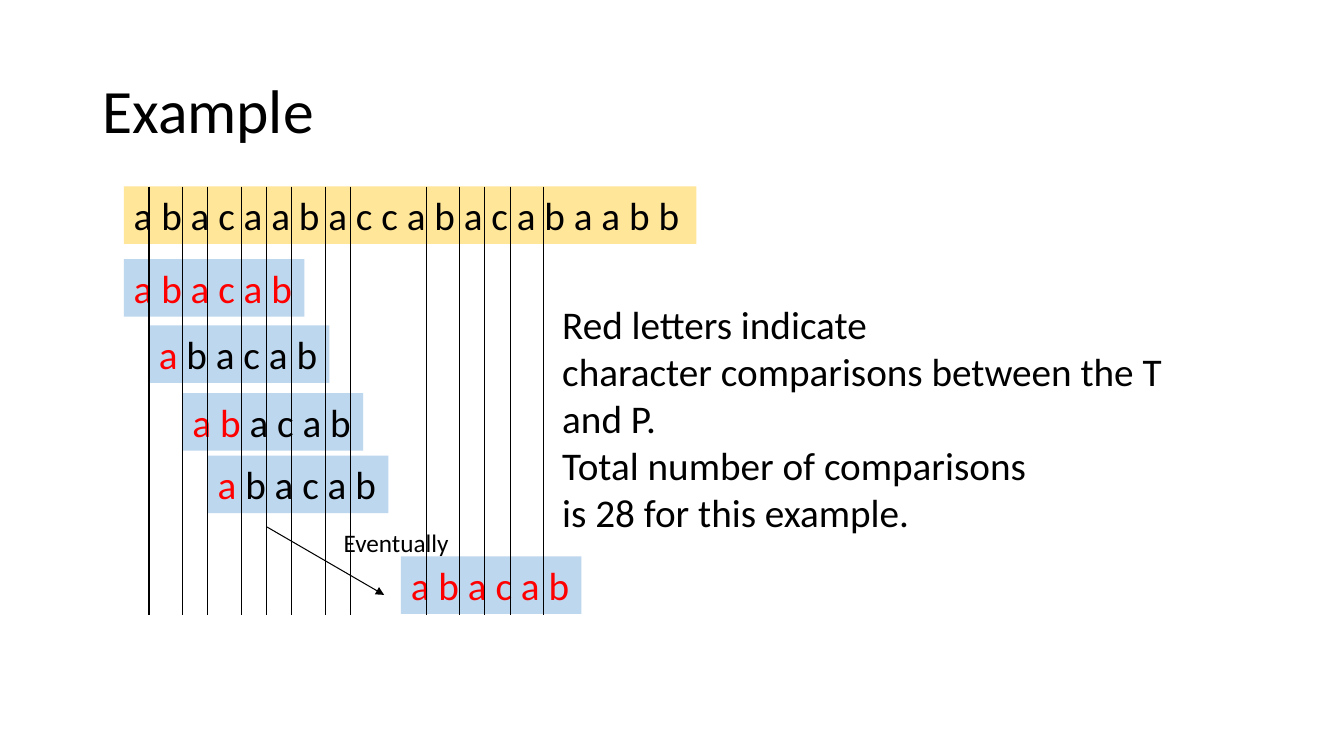
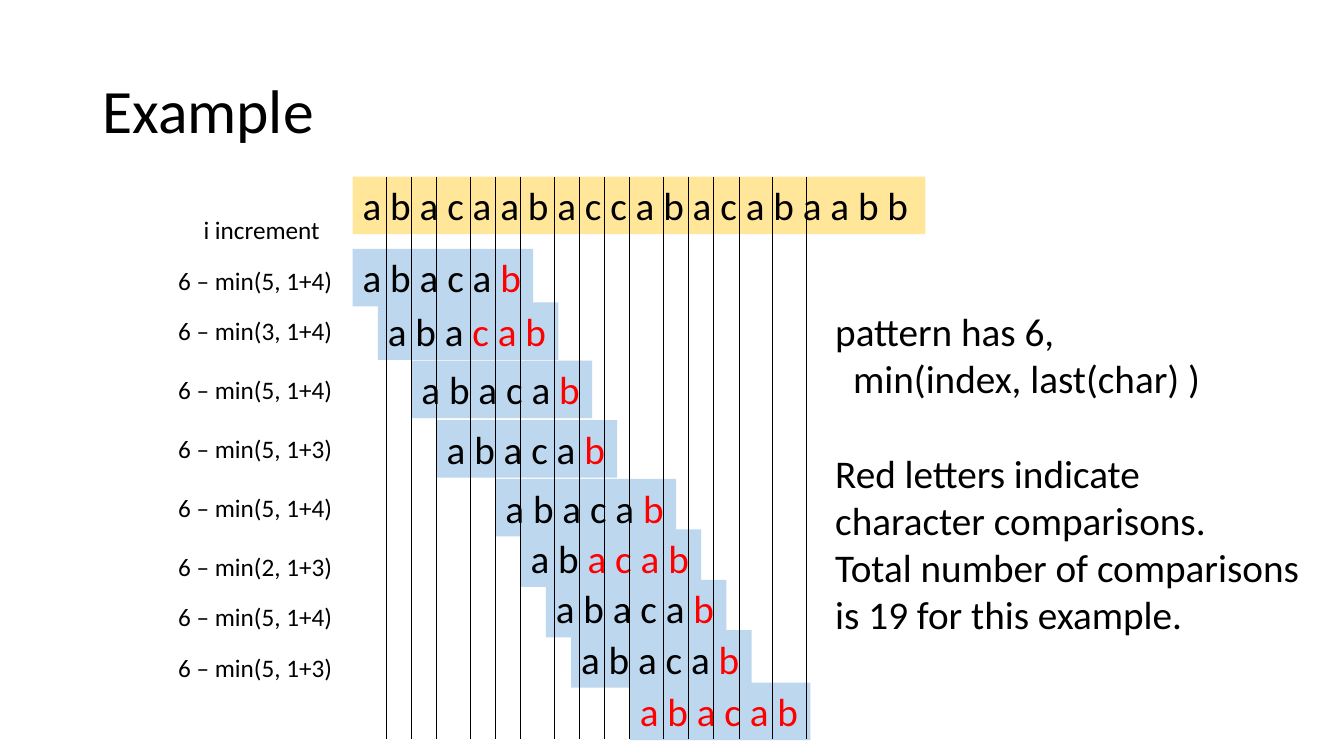
from dataclasses import dataclass

from lxml.etree import SubElement
from pptx import Presentation
from pptx.dml.color import RGBColor
from pptx.enum.shapes import MSO_CONNECTOR, MSO_SHAPE
from pptx.enum.text import MSO_ANCHOR, MSO_AUTO_SIZE, PP_ALIGN
from pptx.oxml.ns import qn
from pptx.shapes.autoshape import Shape
from pptx.shapes.connector import Connector
from pptx.slide import Slide
from pptx.util import Cm, Pt

COLORS = {"text": "000000", "compared": "FF0000", "search": "FFE699", "pattern": "BDD7EE"}
FONT = "Calibri"
SEARCH_TEXT = "a b a c a a b a c c a b a c a b a a b b"
PATTERN_TEXT = "a b a c a b"
GRID = 2.54 / 12
STRIP_HEIGHT = 1.45


@dataclass(frozen=True)
class Run:
    text: str
    color: str = "text"


@dataclass(frozen=True)
class Line:
    runs: tuple[Run, ...]
    space_before: float = 0
    indent: float = 0


@dataclass(frozen=True)
class Box:
    left: float
    top: float
    width: float
    height: float


@dataclass(frozen=True)
class Alignment:
    offset: int
    top: float
    first_compared: int
    last_compared: int


@dataclass(frozen=True)
class Diagram:
    left: float
    top: float
    bottom: float
    alignments: tuple[Alignment, ...]
    columns: tuple[int, ...]


FORWARD = Diagram(
    3.12, 4.7, 15.49,
    (
        Alignment(0, 6.53, 1, 6),
        Alignment(3, 8.2, 1, 1),
        Alignment(7, 9.91, 1, 2),
        Alignment(10, 11.48, 1, 1),
        Alignment(33, 14.02, 1, 6),
    ),
    (3, 7, 10, 14, 17, 20, 24, 27, 36, 40, 43, 46, 50),
)
BACKWARD = Diagram(
    8.89, 4.45, 18.62,
    (
        Alignment(0, 6.27, 6, 6),
        Alignment(3, 7.62, 4, 6),
        Alignment(7, 9.09, 6, 6),
        Alignment(10, 10.59, 6, 6),
        Alignment(17, 12.07, 6, 6),
        Alignment(20, 13.34, 3, 6),
        Alignment(23, 14.61, 6, 6),
        Alignment(26, 15.88, 6, 6),
        Alignment(33, 17.2, 1, 6),
    ),
    (4, 7, 10, 14, 17, 20, 24, 27, 30, 33, 37, 40, 43, 46, 50, 54),
)
INCREMENTS = (
    (6.55, "6 – min(5, 1+4)"),
    (7.82, "6 – min(3, 1+4)"),
    (9.32, "6 – min(5, 1+4)"),
    (10.8, "6 – min(5, 1+3)"),
    (12.27, "6 – min(5, 1+4)"),
    (13.77, "6 – min(2, 1+3)"),
    (15.04, "6 – min(5, 1+4)"),
    (16.31, "6 – min(5, 1+3)"),
)


def plain(text: str, space_before: float = 0, indent: float = 0) -> Line:
    return Line((Run(text),), space_before, indent)


def add_text(
    slide: Slide,
    box: Box,
    *lines: Line,
    size: float = 28,
    fill: str | None = None,
    wrap: bool = False,
    grow: bool = True,
    anchor: MSO_ANCHOR = MSO_ANCHOR.TOP,
    line_spacing: float = 1.0,
) -> Shape:
    place = [Cm(value) for value in (box.left, box.top, box.width, box.height)]
    if fill is None:
        shape = slide.shapes.add_textbox(*place)
    else:
        shape = slide.shapes.add_shape(MSO_SHAPE.RECTANGLE, *place)
        shape.shadow.inherit = False
        shape.fill.solid()
        shape.fill.fore_color.rgb = RGBColor.from_string(COLORS[fill])
        shape.line.fill.background()
    frame = shape.text_frame
    frame.word_wrap = wrap
    frame.auto_size = MSO_AUTO_SIZE.SHAPE_TO_FIT_TEXT if grow else MSO_AUTO_SIZE.NONE
    frame.vertical_anchor = anchor
    for index, line in enumerate(lines):
        paragraph = frame.add_paragraph() if index else frame.paragraphs[0]
        paragraph.alignment = PP_ALIGN.LEFT
        paragraph.line_spacing = line_spacing
        paragraph.space_before = Pt(line.space_before)
        if line.indent:
            paragraph._p.get_or_add_pPr().set("marL", str(Cm(line.indent)))
        for part in line.runs:
            run = paragraph.add_run()
            run.text = part.text
            run.font.name = FONT
            run.font.size = Pt(size)
            run.font.color.rgb = RGBColor.from_string(COLORS[part.color])
    return shape


def add_line(
    slide: Slide, left: float, top: float, right: float, bottom: float, arrow: bool = False
) -> Connector:
    connector = slide.shapes.add_connector(
        MSO_CONNECTOR.STRAIGHT, Cm(left), Cm(top), Cm(right), Cm(bottom)
    )
    connector.line.color.rgb = RGBColor.from_string(COLORS["text"])
    connector.line.width = Pt(0.75)
    properties = connector._element.spPr
    if arrow:
        SubElement(properties.find(qn("a:ln")), qn("a:tailEnd"), type="triangle")
    SubElement(properties, qn("a:effectLst"))
    return connector


def pattern_line(alignment: Alignment) -> Line:
    start = 2 * (alignment.first_compared - 1)
    end = 2 * alignment.last_compared
    parts = (
        Run(PATTERN_TEXT[:start]),
        Run(PATTERN_TEXT[start:end], "compared"),
        Run(PATTERN_TEXT[end:]),
    )
    return Line(tuple(part for part in parts if part.text))


def add_diagram(slide: Slide, diagram: Diagram) -> None:
    search_box = Box(diagram.left, diagram.top, 14.43, STRIP_HEIGHT)
    add_text(slide, search_box, plain(SEARCH_TEXT), fill="search")
    for alignment in diagram.alignments:
        left = diagram.left + alignment.offset * GRID
        box = Box(left, alignment.top, 4.55, STRIP_HEIGHT)
        add_text(slide, box, pattern_line(alignment), fill="pattern")
    for column in diagram.columns:
        position = diagram.left + column * GRID
        add_line(slide, position, diagram.top, position, diagram.bottom)


def add_example_slide(presentation: Presentation, diagram: Diagram) -> Slide:
    slide = presentation.slides.add_slide(presentation.slide_layouts[6])
    add_text(
        slide, Box(2.33, 1.01, 29.21, 3.68), plain("Example"),
        size=44, wrap=True, grow=False, anchor=MSO_ANCHOR.MIDDLE, line_spacing=0.9,
    )
    add_diagram(slide, diagram)
    return slide


def build_forward_slide(presentation: Presentation) -> None:
    slide = add_example_slide(presentation, FORWARD)
    add_line(slide, 6.73, 13.28, 9.68, 14.99, arrow=True)
    add_text(
        slide, Box(13.92, 7.44, 16.46, 6.25),
        plain("Red letters indicate"),
        plain("character comparisons between the T and P."),
        plain("Total number of comparisons"),
        plain("is 28 for this example."),
        wrap=True,
    )
    add_text(slide, Box(8.41, 13.16, 3.2, 1.02), plain("Eventually"), size=18)


def build_backward_slide(presentation: Presentation) -> None:
    slide = add_example_slide(presentation, BACKWARD)
    add_text(
        slide, Box(20.8, 7.62, 12.34, 8.64),
        plain("pattern has 6,"),
        plain("min(index, last(char) )", indent=0.45),
        plain("Red letters indicate", space_before=34),
        plain("character comparisons."),
        plain("Total number of comparisons"),
        plain("is 19 for this example."),
    )
    add_text(slide, Box(4.88, 5.28, 3.48, 1.02), plain("i increment"), size=18)
    for top, formula in INCREMENTS:
        add_text(slide, Box(4.24, top, 4.5, 1.02), plain(formula), size=18)


def main() -> None:
    presentation = Presentation()
    presentation.slide_width = Cm(33.87)
    presentation.slide_height = Cm(19.05)
    build_forward_slide(presentation)
    build_backward_slide(presentation)
    presentation.save("out.pptx")


if __name__ == "__main__":
    main()
